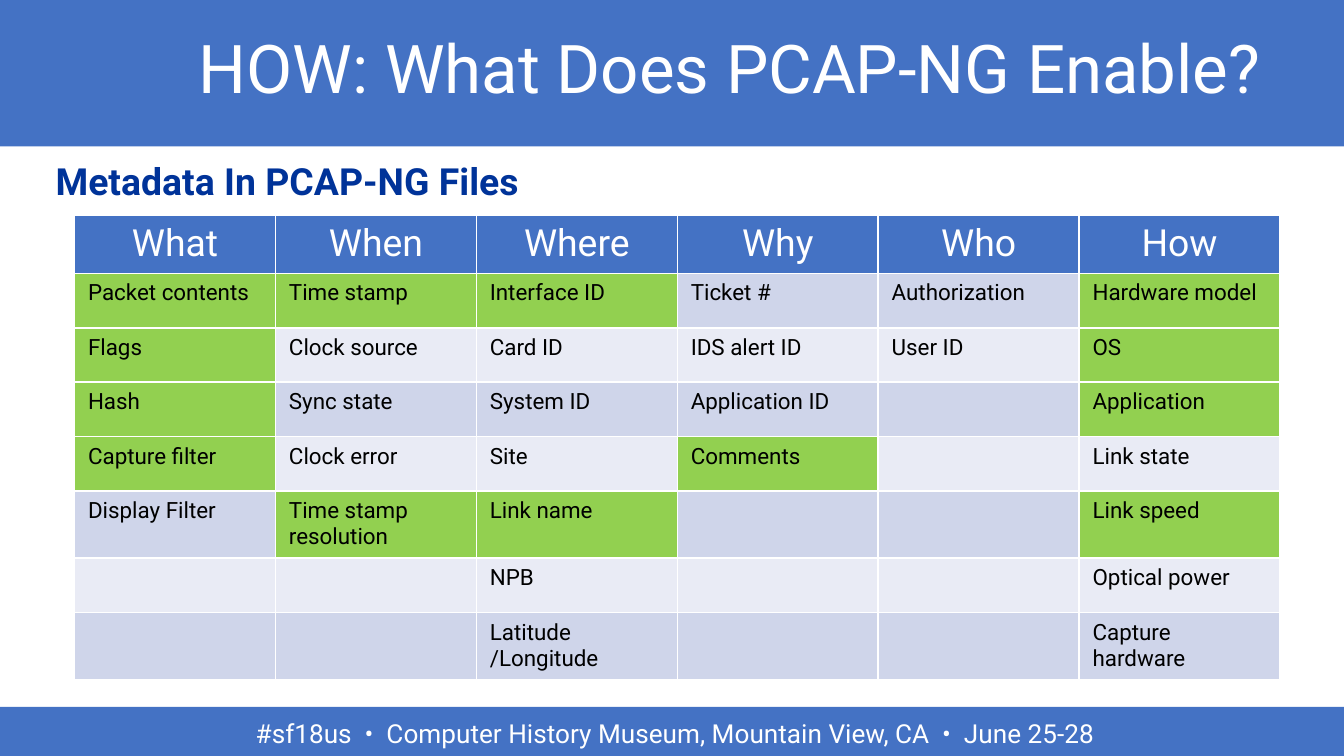
import pptx
import pptx.dml.color
import pptx.enum.shapes
import pptx.enum.text
import pptx.util

PX = 4572  # EMU per px, 200 px to the inch
BLUE = pptx.dml.color.RGBColor(0x44, 0x72, 0xC4)
NAVY = pptx.dml.color.RGBColor(0x00, 0x33, 0x99)
WHITE = pptx.dml.color.RGBColor(0xFF, 0xFF, 0xFF)
BLACK = pptx.dml.color.RGBColor(0x00, 0x00, 0x00)
GREEN = pptx.dml.color.RGBColor(0x92, 0xD0, 0x50)
BANDS = (
    pptx.dml.color.RGBColor(0xCF, 0xD5, 0xEA),
    pptx.dml.color.RGBColor(0xE9, 0xEB, 0xF5),
)

CENTER = pptx.enum.text.PP_ALIGN.CENTER
LEFT = pptx.enum.text.PP_ALIGN.LEFT
TOP = pptx.enum.text.MSO_ANCHOR.TOP
MIDDLE = pptx.enum.text.MSO_ANCHOR.MIDDLE

TITLE = {"size": 36, "color": WHITE, "bold": False}
HEADING = {"size": 20, "color": NAVY, "bold": True}
HEADER = {"size": 20, "color": WHITE, "bold": False}
ENTRY = {"size": 12, "color": BLACK, "bold": False}
FOOTER = {"size": 14, "color": WHITE, "bold": False}

# A leading * marks metadata highlighted in green.
METADATA = {
    "What": ["*Packet contents", "*Flags", "*Hash", "*Capture filter",
             "Display Filter", "", ""],
    "When": ["*Time stamp", "Clock source", "Sync state", "Clock error",
             "*Time stamp resolution", "", ""],
    "Where": ["*Interface ID", "Card ID", "System ID", "Site",
              "*Link name", "NPB", "Latitude /Longitude"],
    "Why": ["Ticket #", "IDS alert ID", "Application ID", "*Comments",
            "", "", ""],
    "Who": ["Authorization", "User ID", "", "", "", "", ""],
    "How": ["*Hardware model", "*OS", "*Application", "Link state",
            "*Link speed", "Optical power", "Capture hardware"],
}


def px(*lengths):
    return [pptx.util.Emu(length * PX) for length in lengths]


def write(paragraph, wording, style, align=LEFT):
    paragraph.alignment = align
    run = paragraph.add_run()
    run.text = wording
    run.font.color.rgb = style["color"]
    values = {"name": "Roboto", "size": pptx.util.Pt(style["size"]),
              "bold": style["bold"]}
    for attribute, value in values.items():
        setattr(run.font, attribute, value)


def add_band(slide, box):
    band = slide.shapes.add_shape(
        pptx.enum.shapes.MSO_SHAPE.RECTANGLE, *px(*box))
    band.shadow.inherit = False
    band.fill.solid()
    band.fill.fore_color.rgb = BLUE
    band.line.fill.background()


def add_label(slide, box, wording, style, align=LEFT, anchor=TOP, inset=10):
    """Add a one-paragraph text box; inset is its top and bottom margin."""
    frame = slide.shapes.add_textbox(*px(*box)).text_frame
    side, edge = px(20, inset)
    values = {"word_wrap": True, "vertical_anchor": anchor,
              "margin_left": side, "margin_right": side,
              "margin_top": edge, "margin_bottom": edge}
    for attribute, value in values.items():
        setattr(frame, attribute, value)
    paragraph = frame.paragraphs[0]
    write(paragraph, wording, style, align)
    return paragraph


def add_title(slide, box):
    left, top, width, height = box
    add_band(slide, box)
    title = add_label(slide, (left + 170, top, width - 170, height - 4),
                      "HOW: What Does PCAP-NG Enable?", TITLE,
                      CENTER, MIDDLE, inset=20)
    title.line_spacing = 0.9


def add_footer(slide, box):
    left, top, width, height = box
    add_band(slide, box)
    add_label(slide, (left + 100, top + 6, width - 190, height),
              "#sf18us  •  Computer History Museum, Mountain View, CA"
              "  •  June 25-28", FOOTER, CENTER)


def fill_cell(cell, wording, style, color, align=LEFT):
    cell.fill.solid()
    cell.fill.fore_color.rgb = color
    if wording:
        write(cell.text_frame.paragraphs[0], wording, style, align)


def add_metadata(slide, box, row_height):
    """Add the metadata table; its default style rules the cells in white."""
    left, top, width = box
    row_count = 1 + max(len(entries) for entries in METADATA.values())
    table = slide.shapes.add_table(
        row_count, len(METADATA),
        *px(left, top, width, row_count * row_height)).table
    for row in table.rows:
        row.height = px(row_height)[0]
    for column, (question, entries) in enumerate(METADATA.items()):
        table.columns[column].width = px(width // len(METADATA))[0]
        fill_cell(table.cell(0, column), question, HEADER, BLUE, CENTER)
        for row, entry in enumerate(entries):
            color = GREEN if entry.startswith("*") else BANDS[row % 2]
            fill_cell(table.cell(row + 1, column), entry.lstrip("*"),
                      ENTRY, color)


def main():
    deck = pptx.Presentation()
    deck.slide_width, deck.slide_height = px(2000, 1125)
    slide = deck.slides.add_slide(deck.slide_layouts[6])
    add_title(slide, (0, 0, 2002, 218))
    add_footer(slide, (0, 1052, 2000, 78))
    add_label(slide, (63, 226, 1890, 88), "Metadata In PCAP-NG Files", HEADING)
    add_metadata(slide, (111, 320, 1794), 81)
    deck.save("out.pptx")


if __name__ == "__main__":
    main()
